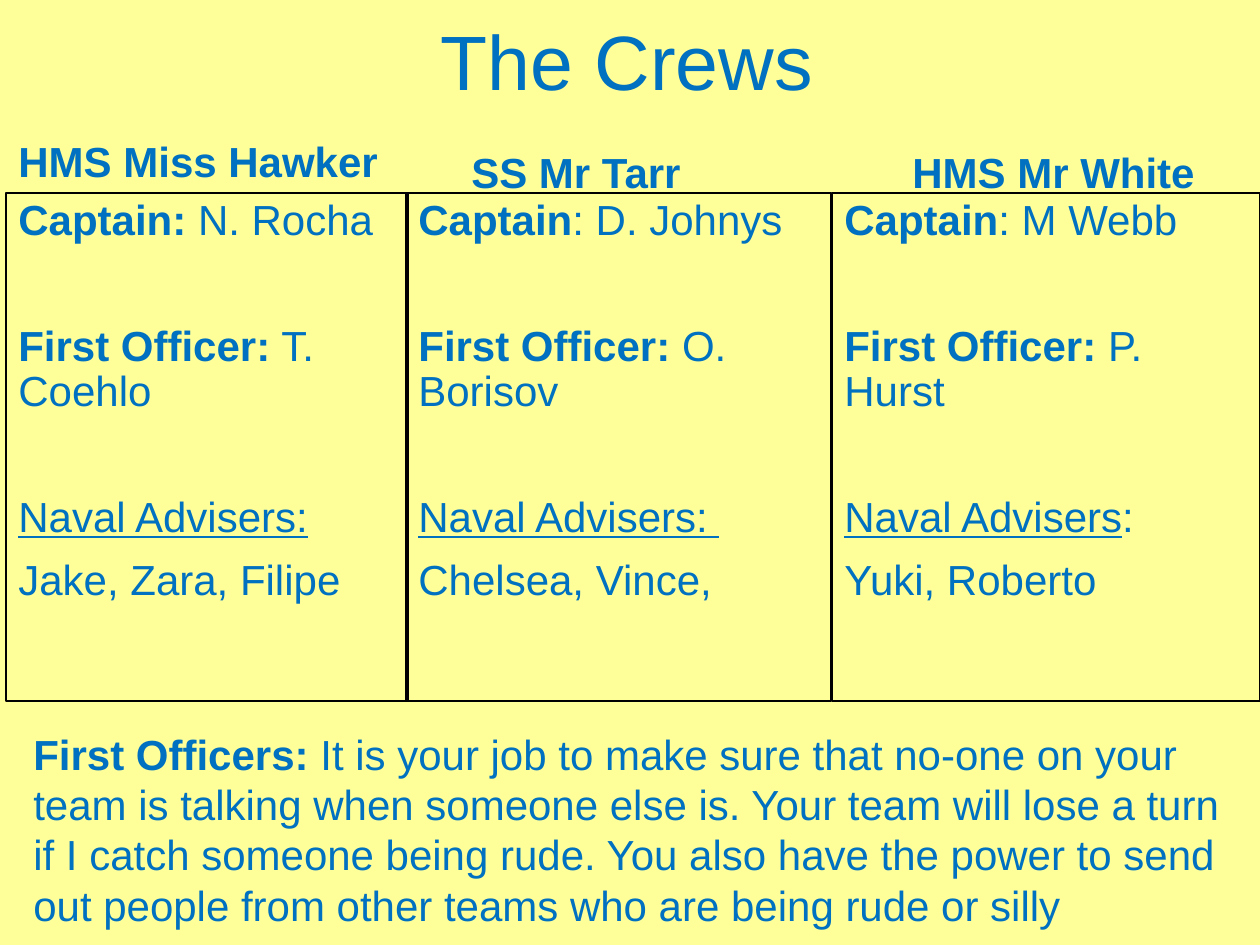
from dataclasses import dataclass

import pptx
import pptx.dml.color
import pptx.enum.shapes
import pptx.enum.text
import pptx.util

PX = 914400 / 126  # EMU per px
INK = "0070C0"
PAPER = "FFFF99"
BORDER = "000000"
ANCHOR = pptx.enum.text.MSO_ANCHOR
PANEL_TOP, PANEL_HEIGHT = 193, 508


@dataclass
class Box:
    left: int
    top: int
    width: int
    height: int


@dataclass
class Run:
    text: str
    bold: bool = False
    underline: bool = False


@dataclass
class Line:
    runs: list[Run]
    space_before: int = 10
    spacing: float = 0.9
    size: int = 24
    centred: bool = False


@dataclass
class Crew:
    ship: str
    heading: Box
    left: int
    width: int
    captain: list[Run]
    officer: list[Run]
    advisers_label: list[Run]
    advisers: str


CREWS = [
    Crew("HMS Miss Hawker", Box(6, 136, 400, 57), 6, 402,
         [Run("Captain:", bold=True), Run(" N. Rocha")],
         [Run("First Officer:", bold=True), Run(" T. Coehlo")],
         [Run("Naval Advisers:", underline=True)], "Jake, Zara, Filipe"),
    Crew("SS Mr Tarr", Box(459, 132, 290, 72), 406, 425,
         [Run("Captain", bold=True), Run(": D. Johnys")],
         [Run("First Officer:", bold=True), Run(" O. Borisov")],
         [Run("Naval Advisers: ", underline=True)], "Chelsea, Vince,"),
    Crew("HMS Mr White", Box(900, 105, 316, 99), 832, 428,
         [Run("Captain", bold=True), Run(": M Webb")],
         [Run("First Officer: ", bold=True), Run("P. Hurst")],
         [Run("Naval Advisers", underline=True), Run(":")], "Yuki, Roberto"),
]


def emu(box: Box) -> list[int]:
    return [round(px * PX) for px in (box.left, box.top, box.width, box.height)]


def colour(value: str) -> pptx.dml.color.RGBColor:
    return pptx.dml.color.RGBColor.from_string(value)


def write(shape, lines: list[Line], anchor) -> None:
    text_frame = shape.text_frame
    text_frame.word_wrap = True
    text_frame.vertical_anchor = anchor
    for index, line in enumerate(lines):
        paragraph = text_frame.add_paragraph() if index else text_frame.paragraphs[0]
        paragraph.alignment = (pptx.enum.text.PP_ALIGN.CENTER if line.centred
                               else pptx.enum.text.PP_ALIGN.LEFT)
        paragraph.line_spacing = line.spacing
        paragraph.space_before = pptx.util.Pt(line.space_before)
        for part in line.runs:
            run = paragraph.add_run()
            run.text = part.text
            run.font.name = "Arial"
            run.font.size = pptx.util.Pt(line.size)
            run.font.bold = part.bold
            run.font.underline = part.underline
            run.font.color.rgb = colour(INK)


def add_text(slide, box: Box, lines: list[Line], anchor) -> None:
    write(slide.shapes.add_textbox(*emu(box)), lines, anchor)


def add_crew(slide, crew: Crew) -> None:
    add_text(slide, crew.heading, [Line([Run(crew.ship, bold=True)])], ANCHOR.BOTTOM)
    panel = Box(crew.left, PANEL_TOP, crew.width, PANEL_HEIGHT)
    shape = slide.shapes.add_shape(pptx.enum.shapes.MSO_SHAPE.RECTANGLE, *emu(panel))
    shape.shadow.inherit = False
    shape.fill.background()
    shape.line.color.rgb = colour(BORDER)
    shape.line.width = pptx.util.Pt(0.75)
    write(shape, [
        Line(crew.captain),
        Line(crew.officer, space_before=46),
        Line(crew.advisers_label, space_before=46),
        Line([Run(crew.advisers)]),
    ], ANCHOR.TOP)


def main() -> None:
    presentation = pptx.Presentation()
    presentation.slide_width = pptx.util.Inches(10)
    presentation.slide_height = pptx.util.Inches(7.5)
    slide = presentation.slides.add_slide(presentation.slide_layouts[6])
    slide.background.fill.solid()
    slide.background.fill.fore_color.rgb = colour(PAPER)

    # Title
    add_text(slide, Box(84, 0, 1086, 132),
             [Line([Run("The Crews")], space_before=0, size=44, centred=True)],
             ANCHOR.MIDDLE)

    # One heading and panel per crew
    for crew in CREWS:
        add_crew(slide, crew)

    # Instruction to the first officers
    instruction = (
        " It is your job to make sure that no-one on your team is talking when "
        "someone else is. Your team will lose a turn if I catch someone being rude. "
        "You also have the power to send out people from other teams who are being "
        "rude or silly")
    add_text(slide, Box(21, 722, 1212, 217),
             [Line([Run("First Officers:", bold=True), Run(instruction)],
                   space_before=0, spacing=1.0)], ANCHOR.TOP)

    presentation.save("out.pptx")


if __name__ == "__main__":
    main()
